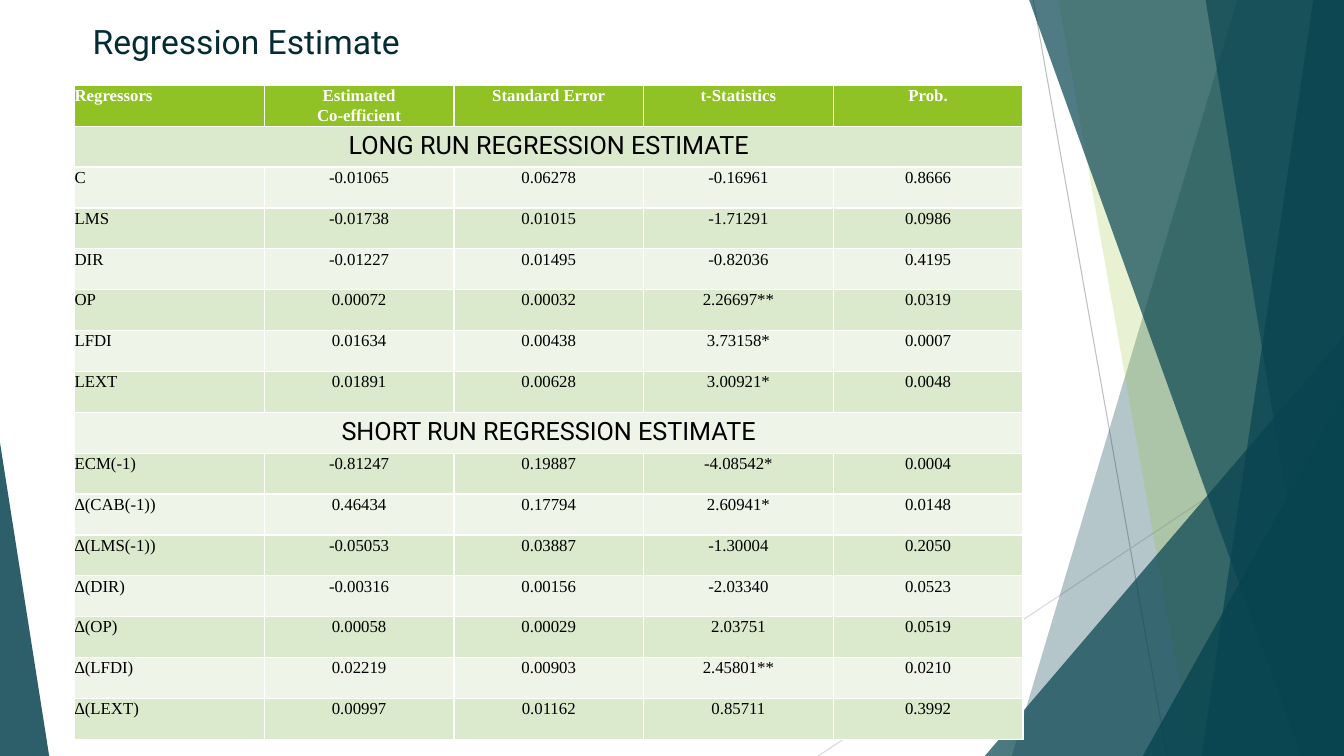
import pptx
import pptx.util
import pptx.dml.color
import pptx.enum.shapes
import pptx.enum.text
import pptx.oxml
import pptx.oxml.ns
import lxml.etree

Cm = pptx.util.Cm
Pt = pptx.util.Pt
ALIGN = pptx.enum.text.PP_ALIGN
WIDTH, HEIGHT = 33.87, 19.05
TEAL, GREEN = "084450", "90C226"


def color(hex_value):
    return pptx.dml.color.RGBColor.from_string(hex_value)


def write(paragraph, text, size, font, hex_value, bold=False):
    run = paragraph.add_run()
    run.text = text
    run.font.size = Pt(size)
    run.font.name = font
    run.font.bold = bold
    run.font.color.rgb = color(hex_value)


deck = pptx.Presentation()
deck.slide_width, deck.slide_height = Cm(WIDTH), Cm(HEIGHT)
slide = deck.slides.add_slide(deck.slide_layouts[5])

# Thin background lines
for x1, y1, x2, y2, hex_value in [
    (26.04, 0, 29.41, HEIGHT, "BFBFBF"),
    (WIDTH, 10.24, 20.62, HEIGHT, "D9D9D9"),
]:
    ray = slide.shapes.add_connector(
        pptx.enum.shapes.MSO_CONNECTOR.STRAIGHT, Cm(x1), Cm(y1), Cm(x2), Cm(y2))
    ray.line.color.rgb = color(hex_value)
    ray.line.width = Pt(0.75)
    lxml.etree.SubElement(ray.line._get_or_add_ln().getparent(),
                          pptx.oxml.ns.qn("a:effectLst"))

# Translucent facets, back to front. A band runs to the right edge and gives
# its left edge at top and bottom; a wedge gives left, top, width and apex.
facets = [
    ("band", (31.19, 25.5), TEAL, 30),
    ("band", (26.67, 30.05), GREEN, 20),
    ("wedge", (24.82, 8.46, 9.05, 1), TEAL, 72),
    ("band", (25.93, 32.79), TEAL, 70),
    ("band", (33.1, 30.28), TEAL, 70),
    ("band", (30.38, 33.48), TEAL, 65),
    ("wedge", (28.8, 9.98, 5.07, 1), TEAL, 80),
    ("wedge", (0, 11.15, 1.24, 0), TEAL, 85),
]
for kind, place, hex_value, opacity in facets:
    if kind == "band":
        top_x, bottom_x = place
        top = Cm(-0.02)
        outline = slide.shapes.build_freeform(Cm(top_x), top)
        outline.add_line_segments([(Cm(WIDTH), top), (Cm(WIDTH), Cm(HEIGHT)),
                                   (Cm(bottom_x), Cm(HEIGHT))], close=True)
        facet = outline.convert_to_shape()
    else:
        left, top, width, apex = place
        facet = slide.shapes.add_shape(
            pptx.enum.shapes.MSO_SHAPE.ISOSCELES_TRIANGLE,
            Cm(left), Cm(top), Cm(width), Cm(HEIGHT - top))
        facet.adjustments[0] = apex
    facet.shadow.inherit = False
    facet.line.fill.background()
    facet.fill.solid()
    facet.fill.fore_color.rgb = color(hex_value)
    tint = facet._element.spPr.find(".//" + pptx.oxml.ns.qn("a:srgbClr"))
    lxml.etree.SubElement(tint, pptx.oxml.ns.qn("a:alpha"), val=str(opacity * 1000))

# Title
title = slide.shapes.title
title.left, title.top, title.width, title.height = Cm(2.08), Cm(0.38), Cm(23.67), Cm(1.32)
title.text_frame.vertical_anchor = pptx.enum.text.MSO_ANCHOR.MIDDLE
heading = title.text_frame.paragraphs[0]
heading.alignment = ALIGN.LEFT
write(heading, "Regression Estimate", 24, "Roboto", "052C34")

# Regression table: a row with one entry is a section heading
estimates = [
    ("Regressors", "Estimated\nCo-efficient", "Standard Error", "t-Statistics", "Prob."),
    ("LONG RUN REGRESSION ESTIMATE",),
    ("C", "-0.01065", "0.06278", "-0.16961", "0.8666"),
    ("LMS", "-0.01738", "0.01015", "-1.71291", "0.0986"),
    ("DIR", "-0.01227", "0.01495", "-0.82036", "0.4195"),
    ("OP", "0.00072", "0.00032", "2.26697**", "0.0319"),
    ("LFDI", "0.01634", "0.00438", "3.73158*", "0.0007"),
    ("LEXT", "0.01891", "0.00628", "3.00921*", "0.0048"),
    ("SHORT RUN REGRESSION ESTIMATE",),
    ("ECM(-1)", "-0.81247", "0.19887", "-4.08542*", "0.0004"),
    ("∆(CAB(-1))", "0.46434", "0.17794", "2.60941*", "0.0148"),
    ("∆(LMS(-1))", "-0.05053", "0.03887", "-1.30004", "0.2050"),
    ("∆(DIR)", "-0.00316", "0.00156", "-2.03340", "0.0523"),
    ("∆(OP)", "0.00058", "0.00029", "2.03751", "0.0519"),
    ("∆(LFDI)", "0.02219", "0.00903", "2.45801**", "0.0210"),
    ("∆(LEXT)", "0.00997", "0.01162", "0.85711", "0.3992"),
]
COLUMNS = len(estimates[0])
table = slide.shapes.add_table(len(estimates), COLUMNS, Cm(1.88), Cm(2.15),
                               Cm(4.78 * COLUMNS), Cm(1.03 * len(estimates))).table

for r, entries in enumerate(estimates):
    is_header, is_section = r == 0, len(entries) == 1
    if is_section:
        table.cell(r, 0).merge(table.cell(r, COLUMNS - 1))
    for c, entry in enumerate(entries):
        cell = table.cell(r, c)
        cell.fill.solid()
        cell.fill.fore_color.rgb = color(
            GREEN if is_header else "DBE9CD" if r % 2 else "EEF4E8")
        if not is_section:
            cell.margin_left = cell.margin_right = cell.margin_top = cell.margin_bottom = 0
        for n, words in enumerate(entry.split("\n")):
            frame = cell.text_frame
            paragraph = frame.add_paragraph() if n else frame.paragraphs[0]
            if is_section:
                paragraph.alignment = ALIGN.CENTER
                write(paragraph, words, 18, "Roboto", "000000")
            else:
                paragraph.alignment = ALIGN.CENTER if c else ALIGN.LEFT
                paragraph.line_spacing = 1.07
                write(paragraph, words, 12, "Times New Roman",
                      "FFFFFF" if is_header else "000000", is_header)

deck.save("out.pptx")
